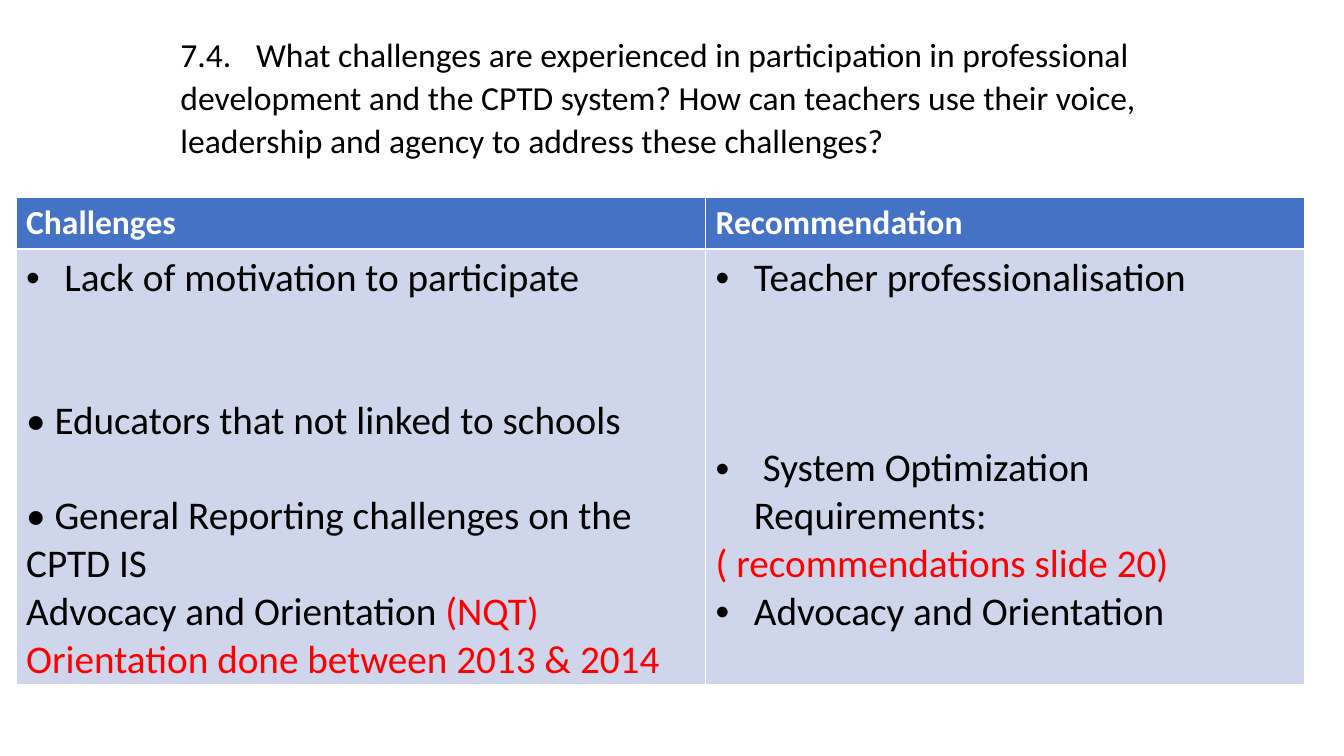
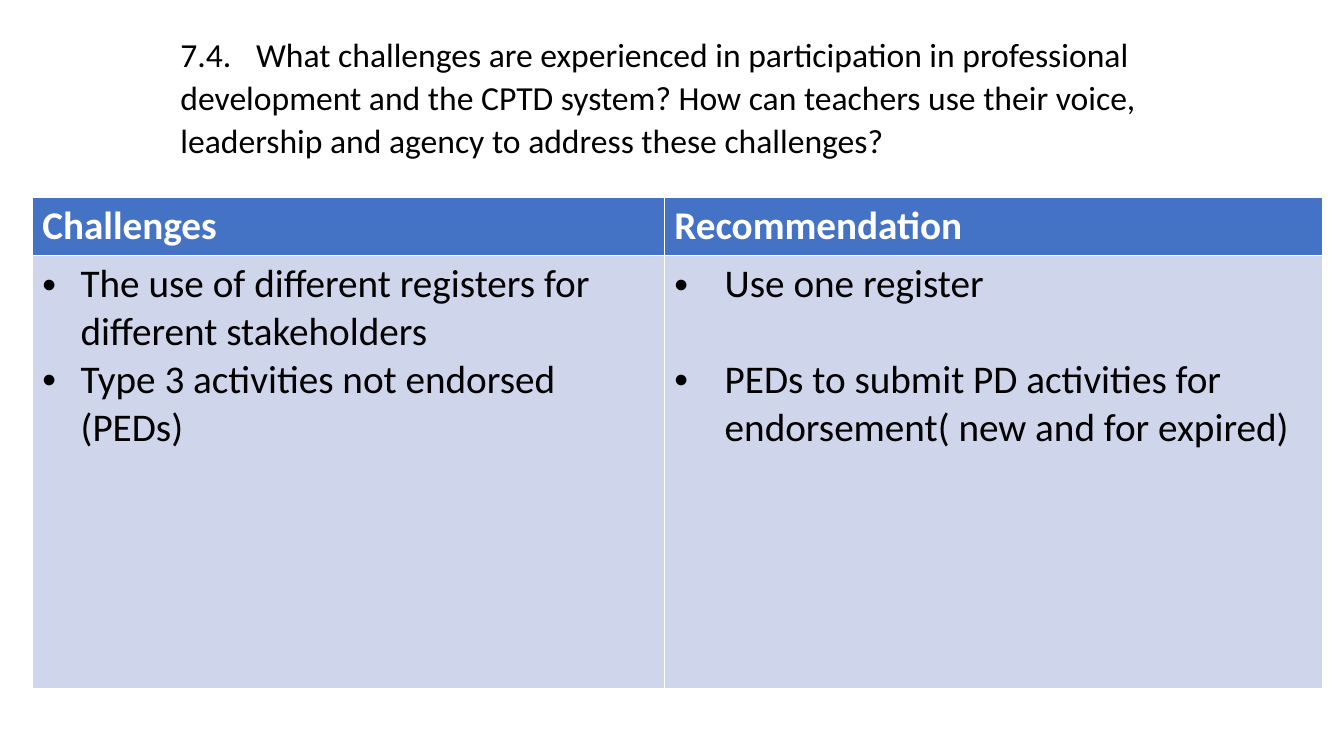
from lxml import etree
from pptx import Presentation
from pptx import util as u
from pptx.dml.color import RGBColor
from pptx.enum import text
from pptx.oxml import ns

PX = 9144  # EMU per px, 100 px to the inch
FONT = "Calibri"
WHITE = RGBColor(0xFF, 0xFF, 0xFF)
BLACK = RGBColor(0, 0, 0)
RED = RGBColor(0xFF, 0, 0)
BLUE = RGBColor(0x44, 0x72, 0xC4)
PALE = RGBColor(0xCF, 0xD5, 0xEA)
BODY_SIZE = 28
BODY_LINE = 34  # points taken by one line of body text
TABLE_TOP = 196

TITLE = ("7.4.\tWhat challenges are experienced in participation in professional "
         "development and the CPTD system? How can teachers use their voice, "
         "leadership and agency to address these challenges?")
HEADERS = ["Challenges", "Recommendation"]

# Each paragraph: lines of space before, bullet indent in px (0 = no bullet), runs
SLIDES = [
    dict(left=16, cols=[684, 594], rows=[51, 429], header_size=24, cells=[
        [(0, 38, [("Lack of motivation to participate", BLACK)]),
         (2, 0, [("• Educators that not linked to schools", BLACK)]),
         (1, 0, [("• General Reporting challenges on the CPTD IS", BLACK)]),
         (0, 0, [("Advocacy and Orientation ", BLACK),
                 ("(NQT) Orientation done between 2013 & 2014", RED)])],
        [(0, 38, [("Teacher professionalisation", BLACK)]),
         (3, 38, [(" System Optimization Requirements:", BLACK)]),
         (0, 0, [("( recommendations slide 20)", RED)]),
         (0, 38, [("Advocacy and Orientation", BLACK)])],
    ]),
    dict(left=32, cols=[627, 653], rows=[57, 430], header_size=28, cells=[
        [(0, 38, [("The use of different registers for different stakeholders", BLACK)]),
         (0, 38, [("Type 3 activities not endorsed (PEDs)", BLACK)])],
        [(0, 50, [("Use one register", BLACK)]),
         (1, 50, [("PEDs to submit PD activities for endorsement( new and for expired)",
                   BLACK)])],
    ]),
]


def style(font, size, color, bold=False):
    font.name = FONT
    font.size = u.Pt(size)
    font.bold = bold
    font.color.rgb = color


def add_ppr_child(p, tag, **attrs):
    return etree.SubElement(p._p.get_or_add_pPr(), ns.qn(tag), **attrs)


prs = Presentation()
prs.slide_width, prs.slide_height = u.Inches(13.333), u.Inches(7.5)

for spec_row in SLIDES:
    s = prs.slides.add_slide(prs.slide_layouts[5])

    title = s.shapes.title
    title.left, title.top, title.width, title.height = (
        v * PX for v in (119, 26, 1159, 138))
    tf = title.text_frame
    tf.text = TITLE
    tf.word_wrap = True
    tf.auto_size = text.MSO_AUTO_SIZE.NONE
    tf.vertical_anchor = text.MSO_ANCHOR.TOP
    tf.margin_left = 60 * PX
    p = tf.paragraphs[0]
    p.alignment = text.PP_ALIGN.LEFT
    p.line_spacing = 1.07
    tabs = add_ppr_child(p, "a:tabLst")
    etree.SubElement(tabs, ns.qn("a:tab"), pos=str(75 * PX), algn="l")
    style(p.runs[0].font, 24, BLACK)

    cols, rows = spec_row["cols"], spec_row["rows"]
    table = s.shapes.add_table(
        len(rows), len(cols), spec_row["left"] * PX, TABLE_TOP * PX,
        sum(cols) * PX, sum(rows) * PX).table
    for row, height in zip(table.rows, rows):
        row.height = height * PX

    for c, width in enumerate(cols):
        table.columns[c].width = width * PX

        header = table.cell(0, c)
        header.fill.solid()
        header.fill.fore_color.rgb = BLUE
        header.text_frame.text = HEADERS[c]
        style(header.text_frame.paragraphs[0].runs[0].font,
              spec_row["header_size"], WHITE, bold=True)

        body = table.cell(1, c)
        body.fill.solid()
        body.fill.fore_color.rgb = PALE
        body.margin_bottom = 0
        tf = body.text_frame
        for i, (gap, indent, runs) in enumerate(spec_row["cells"][c]):
            p = tf.add_paragraph() if i else tf.paragraphs[0]
            if gap:
                p.space_before = u.Pt(gap * BODY_LINE)
            if indent:
                ppr = p._p.get_or_add_pPr()
                ppr.set("marL", str(indent * PX))
                ppr.set("indent", str(-indent * PX))
                add_ppr_child(p, "a:buFont", typeface="Arial")
                add_ppr_child(p, "a:buChar", char="•")
            for words, color in runs:
                r = p.add_run()
                r.text = words
                style(r.font, BODY_SIZE, color)

prs.save("out.pptx")
